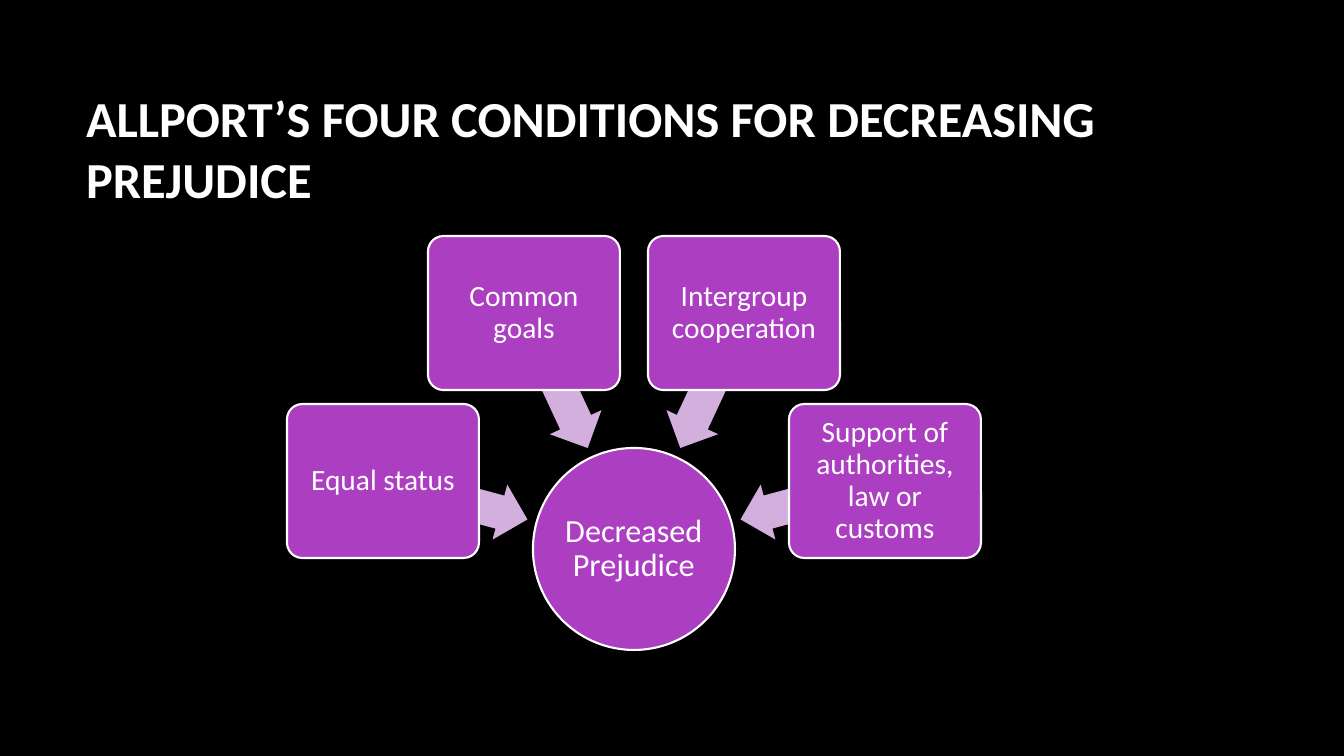
from pptx import Presentation, util as u
from pptx.dml.color import RGBColor
from pptx.enum import shapes, text

PX = 914400 / 100.8
COLORS = {"background": "000000", "text": "FFFFFF", "node": "AC3EC1", "arrow": "D2AFDD"}
KIND = shapes.MSO_SHAPE


def add_shape(kind, cx, cy, w, h, color, outlined=True):
    """Add a filled shape centred on (cx, cy), in px."""
    sp = s.shapes.add_shape(kind, *(round(v * PX) for v in (cx - w / 2, cy - h / 2, w, h)))
    sp.shadow.inherit = False
    sp.fill.solid()
    sp.fill.fore_color.rgb = RGBColor.from_string(COLORS[color])
    if outlined:
        sp.line.color.rgb = RGBColor.from_string(COLORS["text"])
        sp.line.width = u.Pt(1.5)
    else:
        sp.line.fill.background()
    return sp


def set_text(sp, words, size, align, inset=None, spacing=None, bold=False):
    tf = sp.text_frame
    tf.text = words
    frame = {"word_wrap": True, "auto_size": text.MSO_AUTO_SIZE.NONE,
             "vertical_anchor": text.MSO_ANCHOR.MIDDLE}
    if inset is not None:
        for side in ("left", "top", "right", "bottom"):
            frame[f"margin_{side}"] = round(inset * PX)
    for name, value in frame.items():
        setattr(tf, name, value)
    p = tf.paragraphs[0]
    p.alignment = align
    p.line_spacing = spacing
    font = p.runs[0].font
    for name, value in {"name": "Calibri", "size": u.Pt(size), "bold": bold}.items():
        setattr(font, name, value)
    font.color.rgb = RGBColor.from_string(COLORS["text"])


prs = Presentation()
prs.slide_width, prs.slide_height = round(1344 * PX), round(756 * PX)
s = prs.slides.add_slide(prs.slide_layouts[5])
s.background.fill.solid()
s.background.fill.fore_color.rgb = RGBColor.from_string(COLORS["background"])

title = s.shapes.title
for name, value in {"left": 76, "top": 68, "width": 1117, "height": 160}.items():
    setattr(title, name, round(value * PX))
set_text(title, "ALLPORT’S FOUR CONDITIONS FOR DECREASING PREJUDICE", 36,
         text.PP_ALIGN.LEFT, bold=True)

CENTER_X = 634
outcome = add_shape(KIND.OVAL, CENTER_X, 549, 202, 202, "node")
set_text(outcome, "Decreased Prejudice", 23, text.PP_ALIGN.CENTER, inset=2, spacing=0.9)

# label, box offset and centre y, arrow offset and centre y
conditions = [
    ("Equal status", -251, 481, -179, 500),
    ("Common goals", -110, 313, -78, 380),
    ("Intergroup cooperation", 110, 313, 78, 380),
    ("Support of authorities, law or customs", 251, 481, 179, 500),
]
for i, (label, box_dx, box_y, arrow_dx, arrow_y) in enumerate(conditions):
    arrow = add_shape(KIND.LEFT_ARROW, CENTER_X + arrow_dx, arrow_y, 150, 57, "arrow", outlined=False)
    arrow.adjustments[0] = 0.6
    arrow.adjustments[1] = 0.5
    arrow.rotation = 195 + 50 * i
    box = add_shape(KIND.ROUNDED_RECTANGLE, CENTER_X + box_dx, box_y, 192, 154, "node")
    box.adjustments[0] = 0.1
    set_text(box, label, 21, text.PP_ALIGN.CENTER, inset=4, spacing=0.9)

prs.save("out.pptx")
